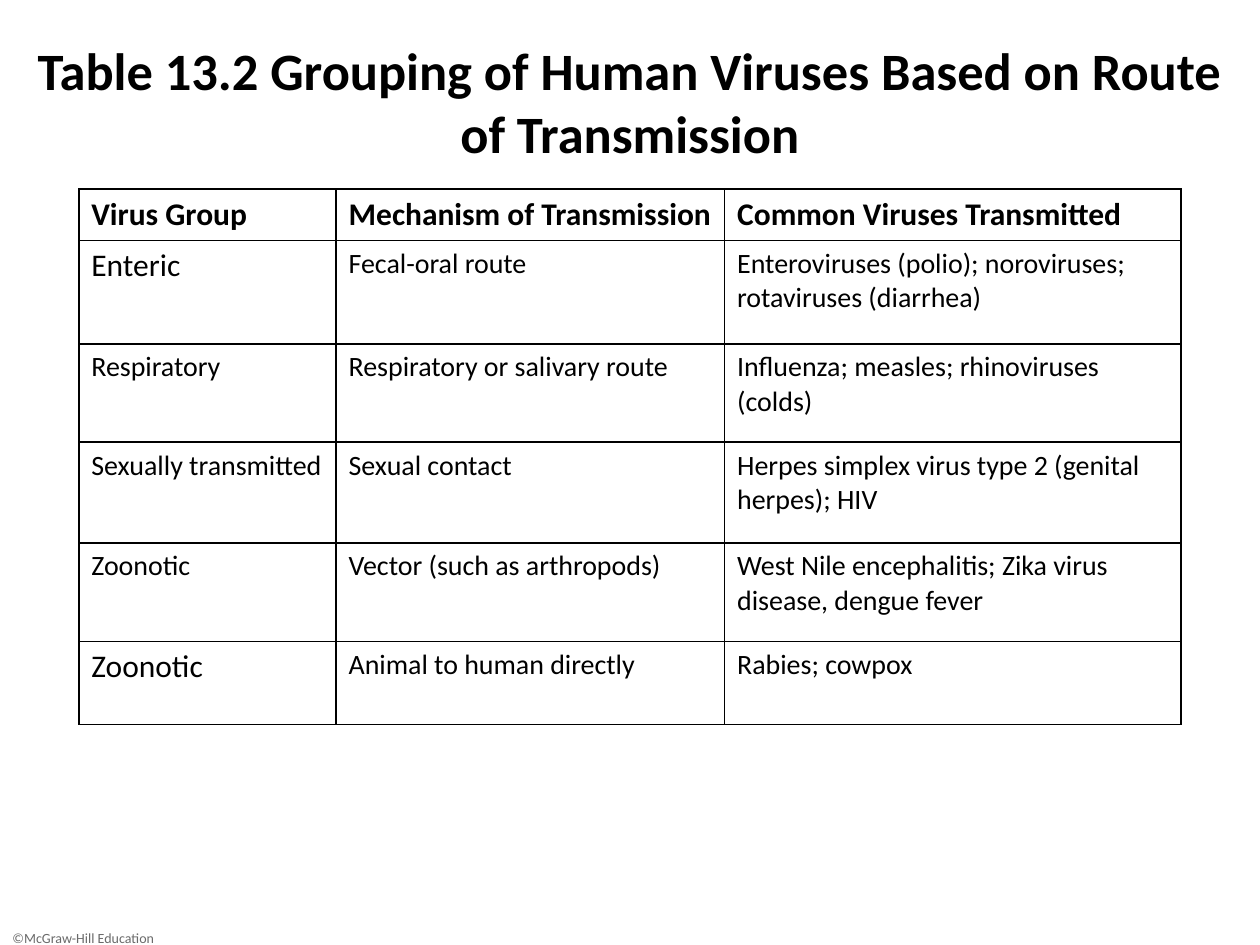
from lxml import etree
from pptx import Presentation
from pptx import util as u
from pptx.dml.color import RGBColor
from pptx.enum import text as t
from pptx.oxml import ns

BLACK = RGBColor(0x00, 0x00, 0x00)
GREY = RGBColor(0x6A, 0x6A, 0x6A)
FONT = "Calibri"
WIDTH, HEIGHT = u.Inches(10), u.Inches(7.5)

TITLE = "Table 13.2 Grouping of Human Viruses Based on Route of Transmission"
HEADINGS = ["Virus Group", "Mechanism of Transmission", "Common Viruses Transmitted"]
GROUPS = [
    ["Enteric", "Fecal-oral route", "Enteroviruses (polio); noroviruses; rotaviruses (diarrhea)"],
    ["Respiratory", "Respiratory or salivary route", "Influenza; measles; rhinoviruses (colds)"],
    ["Sexually transmitted", "Sexual contact", "Herpes simplex virus type 2 (genital herpes); HIV"],
    ["Zoonotic", "Vector (such as arthropods)", "West Nile encephalitis; Zika virus disease, dengue fever"],
    ["Zoonotic", "Animal to human directly", "Rabies; cowpox"],
]
LARGE_GROUP_ROWS = {1, 5}
COLUMN_WIDTHS = [2.04, 3.08, 3.62]
ROW_HEIGHTS = [0.41, 0.82, 0.78, 0.8, 0.78, 0.66]


def share(left, top, width, height):
    return [int(WIDTH * left), int(HEIGHT * top), int(WIDTH * width), int(HEIGHT * height)]


def write(frame, content, size, color=BLACK, bold=False, align=t.PP_ALIGN.LEFT):
    frame.word_wrap = True
    paragraph = frame.paragraphs[0]
    paragraph.alignment = align
    run = paragraph.add_run()
    run.text = content
    font = run.font
    font.name, font.size, font.bold = FONT, u.Pt(size), bold
    font.color.rgb = color


def add_borders(cell, color=BLACK, width=1):
    properties = cell._tc.get_or_add_tcPr()
    for position, side in enumerate(("a:lnL", "a:lnR", "a:lnT", "a:lnB")):
        line = etree.Element(ns.qn(side), w=str(u.Pt(width)))
        fill = etree.SubElement(line, ns.qn("a:solidFill"))
        etree.SubElement(fill, ns.qn("a:srgbClr"), val=str(color))
        properties.insert(position, line)


def add_title(slide, box):
    title = slide.shapes.title
    title.left, title.top, title.width, title.height = box
    frame = title.text_frame
    frame.auto_size = t.MSO_AUTO_SIZE.NONE
    frame.vertical_anchor = t.MSO_ANCHOR.TOP
    write(frame, TITLE, 30, bold=True, align=t.PP_ALIGN.CENTER)


def add_virus_table(slide, box):
    rows = [HEADINGS] + GROUPS
    table = slide.shapes.add_table(len(rows), len(HEADINGS), *box).table
    table.first_row = table.horz_banding = False
    for column, width in zip(table.columns, COLUMN_WIDTHS):
        column.width = int(box[2] * width / sum(COLUMN_WIDTHS))
    for row, height in zip(table.rows, ROW_HEIGHTS):
        row.height = int(box[3] * height / sum(ROW_HEIGHTS))
    for row_index, row in enumerate(rows):
        for column_index, content in enumerate(row):
            cell = table.cell(row_index, column_index)
            cell.fill.background()
            add_borders(cell)
            heading = row_index == 0
            large = heading or (column_index == 0 and row_index in LARGE_GROUP_ROWS)
            write(cell.text_frame, content, 18 if large else 16, bold=heading)


def add_copyright(slide, box):
    frame = slide.shapes.add_textbox(*box).text_frame
    write(frame, "©McGraw-Hill Education", 8, color=GREY)


def main():
    presentation = Presentation()
    presentation.slide_width, presentation.slide_height = WIDTH, HEIGHT
    slide = presentation.slides.add_slide(presentation.slide_layouts[5])
    add_copyright(slide, share(0, 0.977, 0.15, 0.023))
    add_title(slide, share(0, 1 / 30, 1, 2 / 15))
    add_virus_table(slide, share(0.0625, 0.2, 0.875, 17 / 30))
    presentation.save("out.pptx")


if __name__ == "__main__":
    main()
